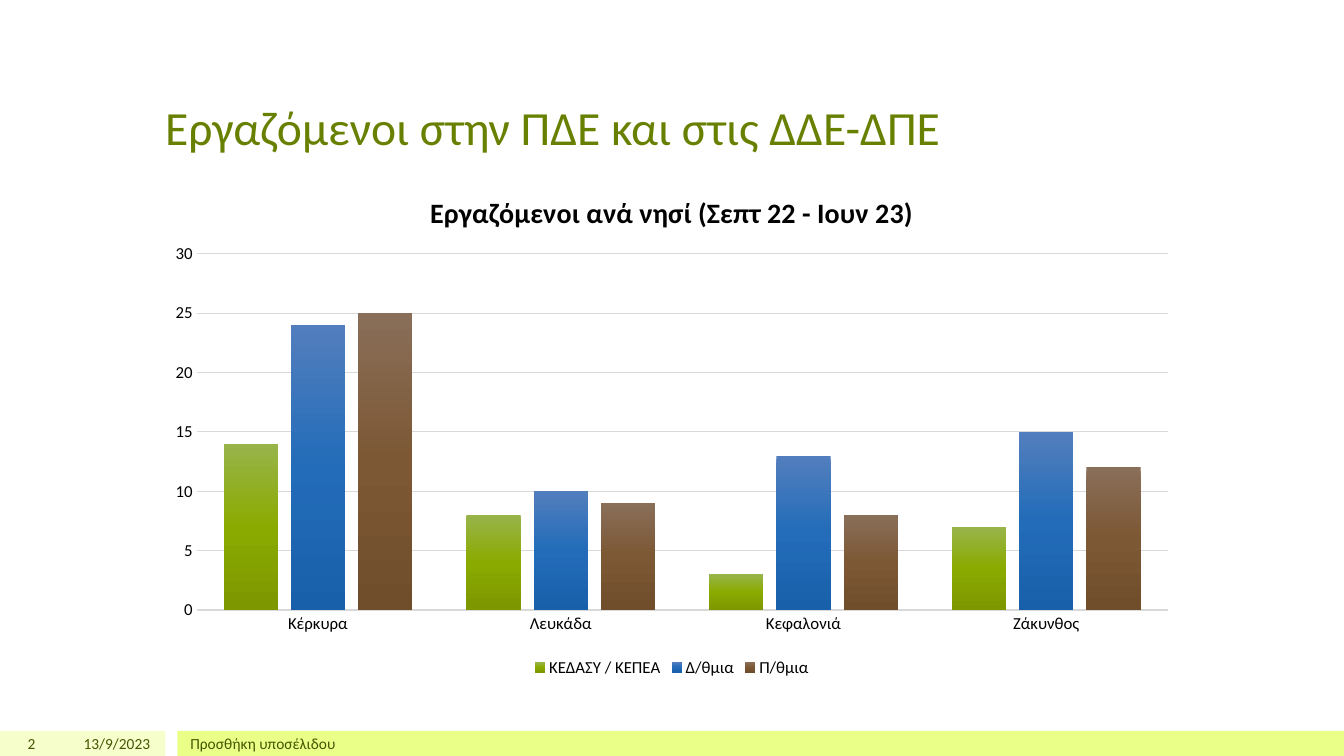
from lxml import etree
from pptx import Presentation
from pptx.chart.data import CategoryChartData
from pptx.dml.color import RGBColor
from pptx.enum.chart import XL_CHART_TYPE, XL_LEGEND_POSITION, XL_TICK_MARK
from pptx.enum.shapes import MSO_SHAPE
from pptx.enum.text import MSO_ANCHOR, PP_ALIGN
from pptx.oxml.ns import qn
from pptx.util import Inches, Pt

COLUMN_CLUSTERED = XL_CHART_TYPE.COLUMN_CLUSTERED
LEGEND_BOTTOM = XL_LEGEND_POSITION.BOTTOM
NO_TICK = XL_TICK_MARK.NONE
RECTANGLE = MSO_SHAPE.RECTANGLE
BOTTOM, MIDDLE = MSO_ANCHOR.BOTTOM, MSO_ANCHOR.MIDDLE
LEFT, RIGHT = PP_ALIGN.LEFT, PP_ALIGN.RIGHT

COLUMNS, ROWS = 160, 90
CONTENT_LEFT, CONTENT_WIDTH = 18.48, 123
FOOTER_TOP, FOOTER_HEIGHT = 87, 3

ISLANDS = ["Κέρκυρα", "Λευκάδα", "Κεφαλονιά", "Ζάκυνθος"]
STAFF = [
    ("ΚΕΔΑΣΥ / ΚΕΠΕΑ", [14, 8, 3, 7], ["98B44B", "8BAA00", "7C9700"]),
    ("Δ/θμια", [24, 10, 13, 15], ["527EBD", "236CB9", "1960AA"]),
    ("Π/θμια", [25, 9, 8, 12], ["896E59", "7C5834", "714E2B"]),
]


def color(value):
    return RGBColor.from_string(value)


class SlideBuilder:
    font_name = "Calibri"
    grid_color = "D9D9D9"
    chart_color = "000000"

    def __init__(self, presentation):
        self.column = presentation.slide_width / COLUMNS
        self.row = presentation.slide_height / ROWS
        self.slide = presentation.slides.add_slide(presentation.slide_layouts[6])

    def box(self, left, top, width, height):
        """Turn columns and rows into slide lengths."""
        return (round(left * self.column), round(top * self.row),
                round(width * self.column), round(height * self.row))

    def style_font(self, font, size, font_color, bold=False):
        font.name = self.font_name
        font.size = Pt(size)
        font.bold = bold
        font.color.rgb = color(font_color)

    def band(self, left, width, fill_color):
        shape = self.slide.shapes.add_shape(
            RECTANGLE, *self.box(left, FOOTER_TOP, width, FOOTER_HEIGHT))
        shape.shadow.inherit = False
        shape.fill.solid()
        shape.fill.fore_color.rgb = color(fill_color)
        shape.line.fill.background()

    def text(self, words, place, size, font_color, anchor, alignment=LEFT):
        frame = self.slide.shapes.add_textbox(*self.box(*place)).text_frame
        frame.word_wrap = True
        frame.vertical_anchor = anchor
        paragraph = frame.paragraphs[0]
        paragraph.text = words
        paragraph.alignment = alignment
        self.style_font(paragraph.font, size, font_color)

    def footer(self, words, left, width, alignment=LEFT):
        place = (left, FOOTER_TOP, width, FOOTER_HEIGHT)
        self.text(words, place, 11, "455500", MIDDLE, alignment)

    def gradient(self, series, stops):
        """Fill the bars from top to bottom with evenly spaced stops."""
        properties = series.format.fill and series._element.get_or_add_spPr()
        fill = etree.SubElement(properties, qn("a:gradFill"), rotWithShape="1")
        stop_list = etree.SubElement(fill, qn("a:gsLst"))
        for index, value in enumerate(stops):
            position = 100000 * index // (len(stops) - 1)
            stop = etree.SubElement(stop_list, qn("a:gs"), pos=str(position))
            etree.SubElement(stop, qn("a:srgbClr"), val=value)
        etree.SubElement(fill, qn("a:lin"), ang="5400000", scaled="0")

    def plot_area(self, chart, **shares):
        """Fix the inner plot area as shares of the chart's size."""
        area = chart._chartSpace.find(".//" + qn("c:plotArea"))
        layout = area.find(qn("c:layout"))
        if layout is None:
            layout = etree.Element(qn("c:layout"))
            area.insert(0, layout)
        manual = etree.SubElement(layout, qn("c:manualLayout"))
        settings = {"layoutTarget": "inner", "xMode": "edge", "yMode": "edge", **shares}
        for name, value in settings.items():
            etree.SubElement(manual, qn("c:" + name), val=str(value))

    def column_chart(self, title, categories, rows, place):
        data = CategoryChartData()
        data.categories = categories
        for name, values, _ in rows:
            data.add_series(name, values)
        chart = self.slide.shapes.add_chart(
            COLUMN_CLUSTERED, *self.box(*place), data).chart
        self.style_font(chart.font, 12, self.chart_color)

        chart.has_title = True
        paragraph = chart.chart_title.text_frame.paragraphs[0]
        paragraph.text = title
        self.style_font(paragraph.font, 20, self.chart_color, bold=True)
        chart.chart_title.include_in_layout = False

        chart.has_legend = True
        chart.legend.position = LEGEND_BOTTOM
        chart.legend.include_in_layout = False
        self.style_font(chart.legend.font, 12, self.chart_color)

        for axis in (chart.category_axis, chart.value_axis):
            axis.major_tick_mark = axis.minor_tick_mark = NO_TICK
            self.style_font(axis.tick_labels.font, 12, self.chart_color)
        chart.value_axis.minimum_scale = 0
        chart.value_axis.maximum_scale = 30
        chart.value_axis.major_unit = 5
        chart.value_axis.format.line.fill.background()
        gridlines = chart.value_axis.major_gridlines
        for line in (chart.category_axis.format.line, gridlines.format.line):
            line.color.rgb = color(self.grid_color)
            line.width = Pt(0.75)

        plot = chart.plots[0]
        plot.gap_width = 100
        plot.overlap = -24
        plot.vary_by_categories = False
        for series, (_, _, stops) in zip(plot.series, rows):
            self.gradient(series, stops)
        self.plot_area(chart, x=0.04, y=0.16, w=0.94, h=0.7)


def main():
    presentation = Presentation()
    presentation.slide_width = Inches(13.33)
    presentation.slide_height = Inches(7.5)
    builder = SlideBuilder(presentation)

    builder.band(0, 19.68, "F6FFCC")
    builder.band(21.12, 138.88, "E9FF88")
    builder.text("Εργαζόμενοι στην ΠΔΕ και στις ΔΔΕ-ΔΠΕ",
                 (CONTENT_LEFT, 3.6, CONTENT_WIDTH, 15.48), 34, "688000", BOTTOM)
    builder.footer("2", 0, 5.4, RIGHT)
    builder.footer("13/9/2023", 6, 13.08, RIGHT)
    builder.footer("Προσθήκη υποσέλιδου", 21.48, 120)
    builder.column_chart("Εργαζόμενοι ανά νησί (Σεπτ 22 - Ιουν 23)", ISLANDS, STAFF,
                         (CONTENT_LEFT, 20.52, CONTENT_WIDTH, 60.6))
    presentation.save("out.pptx")


if __name__ == "__main__":
    main()
